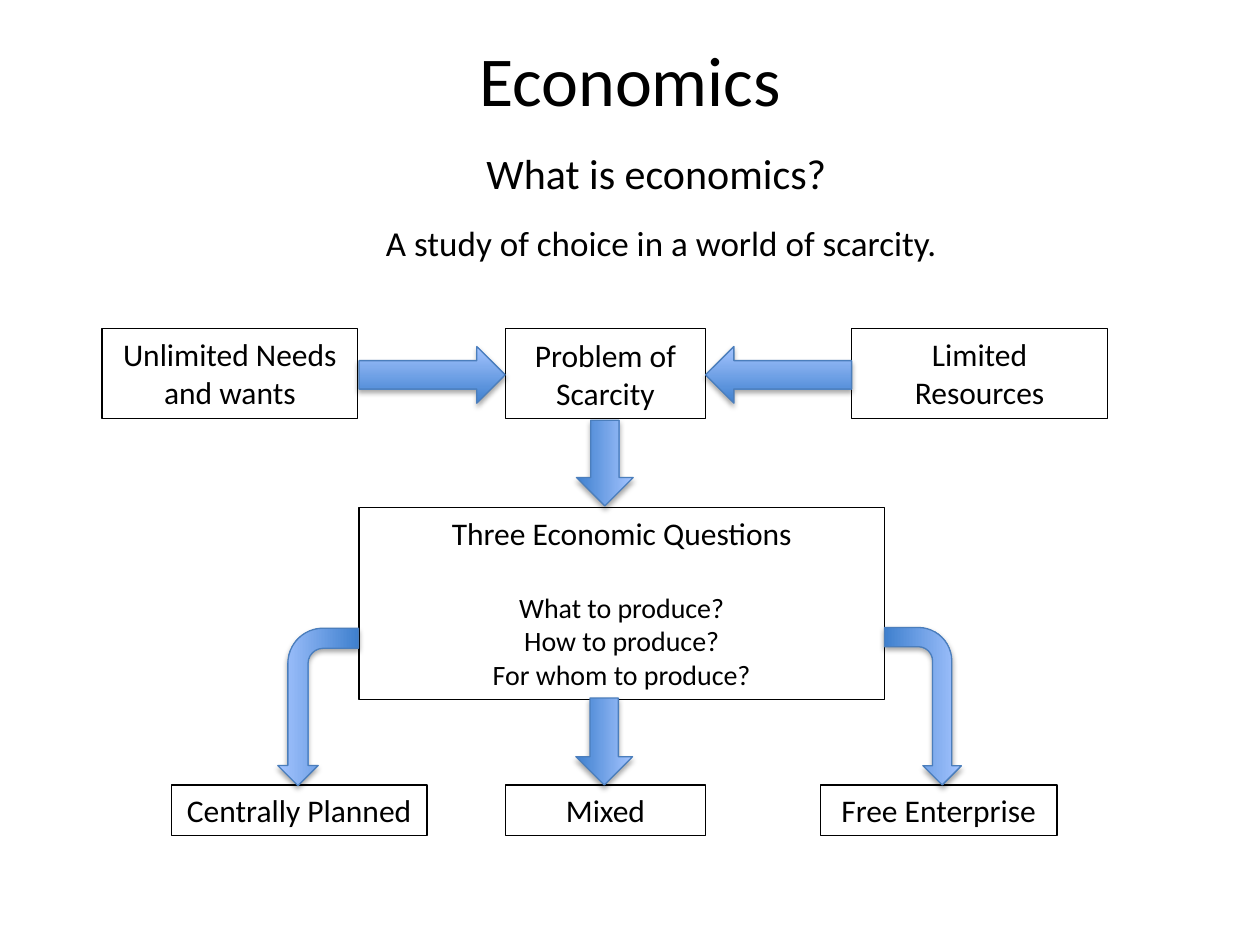
import pptx
import pptx.dml.color
import pptx.enum.shapes
import pptx.enum.text
import pptx.oxml
import pptx.oxml.ns
import pptx.util
from lxml import etree

Inches = pptx.util.Inches
Pt = pptx.util.Pt
SHAPE = pptx.enum.shapes.MSO_SHAPE
ANCHOR = pptx.enum.text.MSO_ANCHOR
AUTO_SIZE = pptx.enum.text.MSO_AUTO_SIZE
qn = pptx.oxml.ns.qn

FONT = "Calibri"
COLORS = {
    "ink": "000000",
    "arrow_dark": "3F80CE",
    "arrow_light": "A4C4FF",
    "arrow_line": "4B7EBC",
}


def rgb(name):
    return pptx.dml.color.RGBColor.from_string(COLORS[name])


def write_line(paragraph, text, size):
    paragraph.alignment = pptx.enum.text.PP_ALIGN.CENTER
    paragraph.space_before = Pt(0)
    run = paragraph.add_run()
    run.text = text
    run.font.name = FONT
    run.font.size = Pt(size)
    run.font.color.rgb = rgb("ink")


def place(shape, left, top, width, height):
    shape.left, shape.top = Inches(left), Inches(top)
    shape.width, shape.height = Inches(width), Inches(height)


def add_heading(slide):
    title = slide.shapes.title
    place(title, 0.5, 0, 9, 1.25)
    title.text_frame.vertical_anchor = ANCHOR.MIDDLE
    write_line(title.text_frame.paragraphs[0], "Economics", 40)

    definition = slide.placeholders[1]
    place(definition, 0.5, 1.71, 9, 0.78)
    definition.text_frame.auto_size = AUTO_SIZE.NONE
    paragraph = definition.text_frame.paragraphs[0]
    paragraph.level = 1
    properties = paragraph._p.get_or_add_pPr()
    properties.set("marL", str(Inches(0.5)))
    properties.set("indent", "0")
    etree.SubElement(properties, qn("a:buNone"))
    write_line(paragraph, "A study of choice in a world of scarcity.", 20)

    question = slide.shapes.add_textbox(
        Inches(0.71), Inches(1.12), Inches(9), Inches(0.66))
    question.text_frame.word_wrap = True
    write_line(question.text_frame.paragraphs[0], "What is economics?", 24)


def add_box(slide, label, left, top, width, height, anchor=ANCHOR.TOP):
    box = slide.shapes.add_shape(
        SHAPE.RECTANGLE, Inches(left), Inches(top), Inches(width), Inches(height))
    box.shadow.inherit = False
    box.fill.background()
    box.line.color.rgb = rgb("ink")
    box.line.width = Pt(0.75)
    frame = box.text_frame
    frame.word_wrap = True
    frame.auto_size = AUTO_SIZE.SHAPE_TO_FIT_TEXT
    frame.vertical_anchor = anchor
    write_line(frame.paragraphs[0], label, 18)
    return frame


def add_shadow(shape):
    shape.shadow.inherit = False
    effects = shape._element.spPr.find(qn("a:effectLst"))
    effects.append(pptx.oxml.parse_xml(
        f'<a:outerShdw {pptx.oxml.ns.nsdecls("a")} blurRad="{Pt(3.1)}" '
        f'dist="{Pt(1.8)}" dir="5400000" rotWithShape="0">'
        f'<a:srgbClr val="{COLORS["ink"]}"><a:alpha val="35000"/></a:srgbClr>'
        '</a:outerShdw>'))


def add_arrow(slide, kind, left, top, width, height, rotation=0, flip=None):
    """Add a shaded block arrow; flip is None, "flipH" or "flipV"."""
    arrow = slide.shapes.add_shape(
        kind, Inches(left), Inches(top), Inches(width), Inches(height))
    arrow.rotation = rotation
    if flip:
        arrow._element.spPr.find(qn("a:xfrm")).set(flip, "1")
    arrow.fill.gradient()
    arrow.fill.gradient_angle = 90
    for stop, position, color in zip(
            arrow.fill.gradient_stops, (0, 1), ("arrow_dark", "arrow_light")):
        stop.position = position
        stop.color.rgb = rgb(color)
    arrow.line.color.rgb = rgb("arrow_line")
    arrow.line.width = Pt(0.75)
    add_shadow(arrow)


def add_boxes(slide):
    causes_row, systems_row = (2.61, 0.71), (6.23, 0.4)
    for label, left, width, (top, height), anchor in (
        ("Unlimited Needs and wants", 0.81, 2.03, causes_row, ANCHOR.TOP),
        ("Problem of Scarcity", 4.01, 1.59, causes_row, ANCHOR.MIDDLE),
        ("Limited Resources", 6.76, 2.03, causes_row, ANCHOR.TOP),
        ("Centrally Planned", 1.36, 2.03, systems_row, ANCHOR.TOP),
        ("Mixed", 4.01, 1.59, systems_row, ANCHOR.TOP),
        ("Free Enterprise", 6.51, 1.88, systems_row, ANCHOR.TOP),
    ):
        add_box(slide, label, left, top, width, height, anchor)

    questions = add_box(slide, "Three Economic Questions", 2.85, 4.03, 4.17, 1.52)
    for text in ("What to produce?", "How to produce?", "For whom to produce?"):
        write_line(questions.add_paragraph(), text, 16)
    questions.paragraphs[1].space_before = Pt(22)


def add_arrows(slide):
    straight, bent = SHAPE.RIGHT_ARROW, SHAPE.BENT_ARROW
    add_arrow(slide, straight, 2.85, 2.75, 1.16, 0.45)
    add_arrow(slide, straight, 5.6, 2.75, 1.16, 0.45, flip="flipH")
    add_arrow(slide, straight, 4.46, 3.45, 0.68, 0.45, rotation=90)
    add_arrow(slide, straight, 4.45, 5.66, 0.69, 0.45, rotation=90)
    add_arrow(slide, bent, 6.7, 5.3, 1.25, 0.61, rotation=90)
    add_arrow(slide, bent, 1.9, 5.29, 1.25, 0.64, rotation=90, flip="flipV")


def main():
    deck = pptx.Presentation()
    deck.slide_width, deck.slide_height = Inches(10), Inches(7.5)
    slide = deck.slides.add_slide(deck.slide_layouts[1])
    add_heading(slide)
    add_boxes(slide)
    add_arrows(slide)
    deck.save("out.pptx")


if __name__ == "__main__":
    main()
